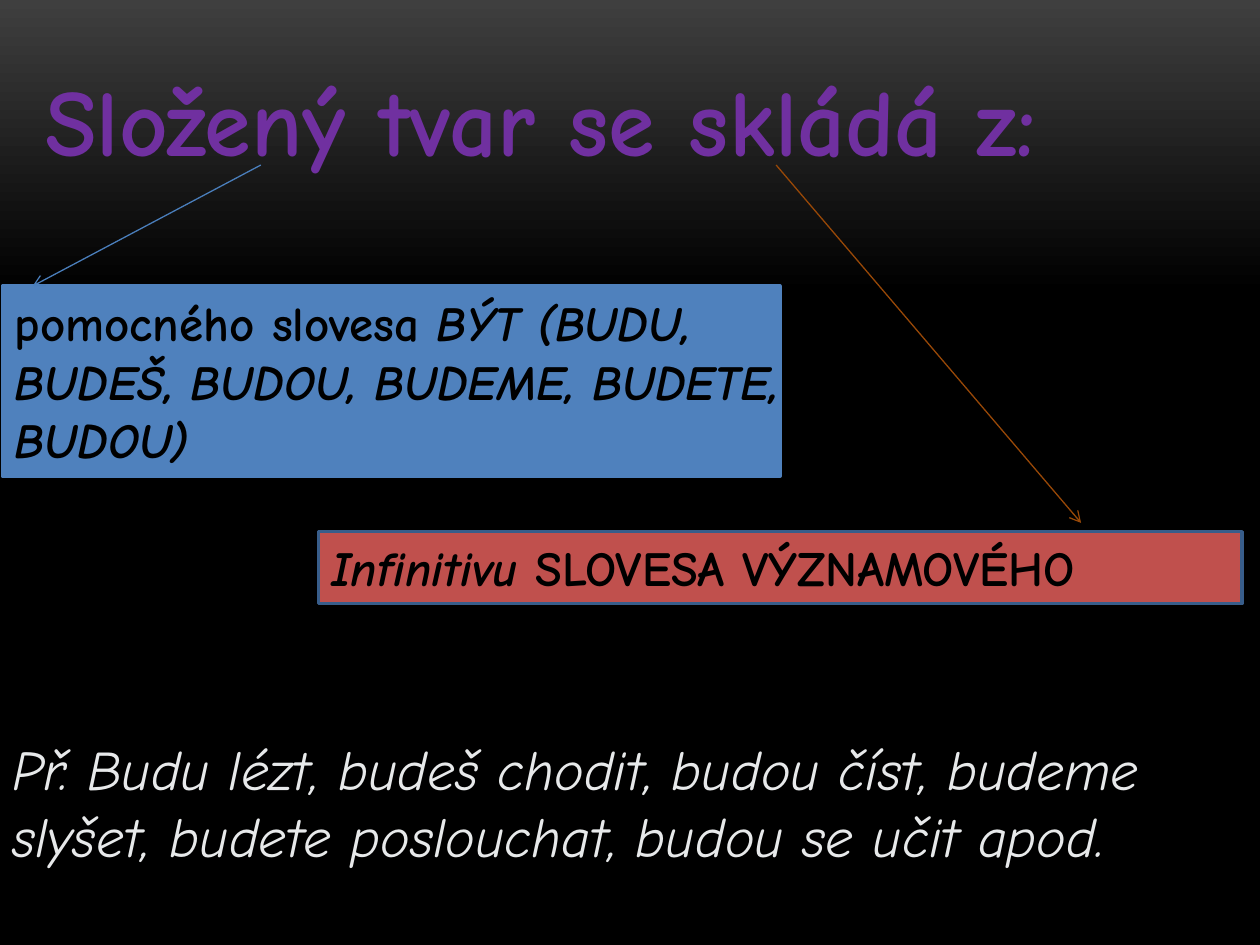
from lxml import etree
from pptx import Presentation
from pptx.dml.color import RGBColor
from pptx.enum.shapes import MSO_CONNECTOR, MSO_SHAPE
from pptx.enum.text import MSO_ANCHOR, MSO_AUTO_SIZE, PP_ALIGN
from pptx.oxml.ns import qn
from pptx.util import Inches, Pt

RECT, STRAIGHT = MSO_SHAPE.RECTANGLE, MSO_CONNECTOR.STRAIGHT
TOP, LEFT, NO_FIT = MSO_ANCHOR.TOP, PP_ALIGN.LEFT, MSO_AUTO_SIZE.NONE
FONT = "Comic Neue"

# Content: runs are (text, bold, italic)
TITLE = [("Složený tvar se skládá z:", True, False)]
AUXILIARY = [
    ("pomocného slovesa ", True, False),
    ("BÝT (BUDU, BUDEŠ, BUDOU, BUDEME, BUDETE, BUDOU)", True, True),
]
INFINITIVE = [("Infinitivu", True, True), (" SLOVESA VÝZNAMOVÉHO", True, False)]
EXAMPLES = [
    ("Př. Budu lézt, budeš chodit, budou číst, budeme slyšet, "
     "budete poslouchat, budou se učit apod.", False, True),
]

# Places: left, top, width, height in inches
TITLE_AT = (0.26, 0.44, 9.6, 1.01)
AUXILIARY_AT = (0.02, 2.27, 6.17, 1.51)
AUXILIARY_TEXT_AT = (0.02, 2.27, 6.93, 1.51)
INFINITIVE_AT = (2.53, 4.22, 7.33, 0.57)
EXAMPLES_AT = (0, 5.78, 9.85, 1.72)

# Arrows: start, end, colour
ARROWS = [
    ((2.07, 1.31), (0.26, 2.27), "4A7EBB"),
    ((6.16, 1.31), (8.58, 4.15), "984807"),
]


def rgb(value):
    return RGBColor.from_string(value)


def inches(values):
    return [Inches(v) for v in values]


def write(s, runs, size, color):
    tf = s.text_frame
    tf.word_wrap = True
    tf.auto_size = NO_FIT
    tf.vertical_anchor = TOP
    p = tf.paragraphs[0]
    p.alignment = LEFT
    for text, bold, italic in runs:
        r = p.add_run()
        r.text = text
        r.font.name, r.font.size = FONT, Pt(size)
        r.font.bold, r.font.italic = bold, italic
        r.font.color.rgb = rgb(color)


def add_box(shapes, at, fill, outline):
    s = shapes.add_shape(RECT, *inches(at))
    s.shadow.inherit = False
    s.fill.solid()
    s.fill.fore_color.rgb = rgb(fill)
    s.line.color.rgb = rgb(outline)
    s.line.width = Pt(2)
    return s


def add_arrow(shapes, start, end, color):
    s = shapes.add_connector(STRAIGHT, *inches(start + end))
    s.line.color.rgb = rgb(color)
    s.line.width = Pt(0.75)
    etree.SubElement(s.line._get_or_add_ln(), qn("a:tailEnd"), type="arrow")
    etree.SubElement(s._element.spPr, qn("a:effectLst"))


def main():
    prs = Presentation()
    prs.slide_width, prs.slide_height = inches((10, 7.5))
    slide = prs.slides.add_slide(prs.slide_layouts[5])
    shapes = slide.shapes

    # Background fading from grey to black
    fill = slide.background.fill
    fill.gradient()
    fill.gradient_angle = 270
    for stop, (position, color) in zip(fill.gradient_stops,
                                       [(0, "3F3F3F"), (0.31, "000000")]):
        stop.position = position
        stop.color.rgb = rgb(color)

    # Title
    title = shapes.title
    title.left, title.top, title.width, title.height = inches(TITLE_AT)
    write(title, TITLE, 54, "7030A0")

    # The two parts of the compound form
    add_box(shapes, AUXILIARY_AT, "4F81BD", "4F81BD")
    write(shapes.add_textbox(*inches(AUXILIARY_TEXT_AT)), AUXILIARY, 28, "000000")
    infinitive = add_box(shapes, INFINITIVE_AT, "C0504D", "385D8A")
    write(infinitive, INFINITIVE, 28, "000000")

    # Examples
    write(shapes.add_textbox(*inches(EXAMPLES_AT)), EXAMPLES, 32, "E7E9EA")

    # Arrows from the title to the parts
    for start, end, color in ARROWS:
        add_arrow(shapes, start, end, color)

    prs.save("out.pptx")


if __name__ == "__main__":
    main()
